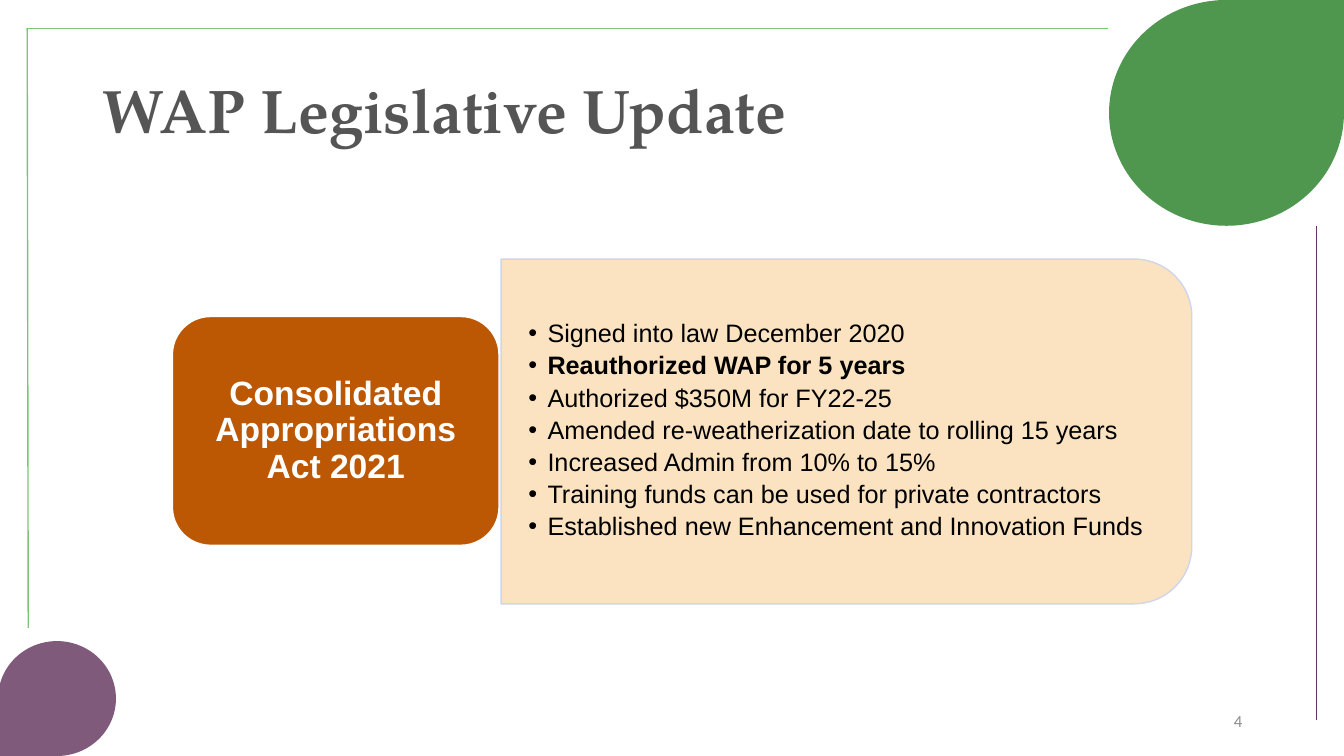
"""Build the WAP legislative update slide."""
from dataclasses import dataclass

from lxml.etree import SubElement
from pptx import Presentation
from pptx.dml.color import RGBColor
from pptx.enum.shapes import MSO_CONNECTOR as Connector, MSO_SHAPE as Shape
from pptx.enum.text import MSO_ANCHOR as Anchor, PP_ALIGN as Align
from pptx.oxml.ns import qn
from pptx.util import Inches, Pt

TITLE = "WAP Legislative Update"
ACT = "Consolidated Appropriations Act 2021"
PROVISIONS = [
    ("Signed into law December 2020", False),
    ("Reauthorized WAP for 5 years", True),
    ("Authorized $350M for FY22-25", False),
    ("Amended re-weatherization date to rolling 15 years", False),
    ("Increased Admin from 10% to 15%", False),
    ("Training funds can be used for private contractors", False),
    ("Established new Enhancement and Innovation Funds", False),
]
PAGE_NUMBER = "4"


@dataclass(frozen=True)
class Theme:
    title_font: str = "TeX Gyre Pagella"
    body_font: str = "Arial"
    number_font: str = "Calibri"
    title_size: int = 44
    act_size: int = 24
    body_size: int = 18
    number_size: int = 12
    title: str = "555555"
    text: str = "000000"
    number: str = "8C8C8C"
    white: str = "FFFFFF"
    green: str = "338533"
    light_green: str = "7CC576"
    purple: str = "63365F"
    orange: str = "BC5704"
    peach: str = "F8C984"
    panel_edge: str = "CFD5EA"


THEME = Theme()
FRAME_LINES = [
    ((0.27, 0.28), (10.99, 0.28), THEME.light_green),
    ((0.27, 0.28), (0.28, 6.23), THEME.light_green),
    ((13.06, 2.24), (13.06, 7.14), THEME.purple),
]
PANEL = (4.97, 2.57, 6.85, 3.42)
ACT_BOX = (1.71, 3.14, 3.24, 2.27)


def set_alpha(color_format, percent):
    color = color_format._xFill.find(qn("a:srgbClr"))
    SubElement(color, qn("a:alpha"), val=str(percent * 1000))


def add_block(page, kind, area, fill, alpha=100, edge=None, rotation=0):
    block = page.shapes.add_shape(kind, *map(Inches, area))
    block.shadow.inherit = False
    block.rotation = rotation
    block.fill.solid()
    block.fill.fore_color.rgb = RGBColor.from_string(fill)
    if alpha < 100:
        set_alpha(block.fill.fore_color, alpha)
    if edge:
        block.line.color.rgb = RGBColor.from_string(edge)
        block.line.width = Pt(1)
    else:
        block.line.fill.background()
    return block


def add_line(page, start, end, color):
    line = page.shapes.add_connector(Connector.STRAIGHT, *map(Inches, start + end))
    line.line.color.rgb = RGBColor.from_string(color)
    line.line.width = Pt(1)
    SubElement(line._element.spPr, qn("a:effectLst"))


def prepare_frame(shape, insets=(0.1, 0.05)):
    frame = shape.text_frame
    frame.word_wrap = True
    frame.vertical_anchor = Anchor.MIDDLE
    frame.margin_left = frame.margin_right = Inches(insets[0])
    frame.margin_top = frame.margin_bottom = Inches(insets[1])
    return frame


def write(para, text, font, size, color, bold=False, align=Align.LEFT,
          line_spacing=0.9, after=0, bullet=False):
    para.alignment = align
    para.line_spacing = line_spacing
    para.space_before = Pt(0)
    para.space_after = Pt(after)
    if bullet:
        indent = Inches(0.19)
        props = para._p.get_or_add_pPr()
        props.set("marL", str(indent))
        props.set("indent", str(-indent))
        SubElement(props, qn("a:buFont"), typeface="Arial")
        SubElement(props, qn("a:buChar"), char="•")
    span = para.add_run()
    span.text = text
    span.font.name = font
    span.font.size = Pt(size)
    span.font.bold = bold
    span.font.color.rgb = RGBColor.from_string(color)


def add_text_box(page, area, insets=(0.1, 0.05)):
    return prepare_frame(page.shapes.add_textbox(*map(Inches, area)), insets)


def main():
    deck = Presentation()
    deck.slide_width, deck.slide_height = Inches(13.33), Inches(7.5)
    page = deck.slides.add_slide(deck.slide_layouts[5])

    title = page.shapes.title
    title.left, title.top, title.width, title.height = map(Inches, (0.92, 0.4, 11.5, 1.45))
    write(prepare_frame(title).paragraphs[0], TITLE, THEME.title_font,
          THEME.title_size, THEME.title, bold=True)

    for start, end, color in FRAME_LINES:
        add_line(page, start, end, color)
    add_block(page, Shape.TEAR, (11, 0, 2.33, 2.24), THEME.green, alpha=86)
    add_block(page, Shape.TEAR, (-0.02, 6.36, 1.17, 1.14), THEME.purple,
              alpha=82, rotation=180)

    left, top, width, height = PANEL
    shift = (width - height) / 2
    add_block(page, Shape.ROUND_2_SAME_RECTANGLE,
              (left + shift, top - shift, height, width), THEME.peach,
              alpha=50, edge=THEME.panel_edge, rotation=90)
    provisions = add_text_box(page, (left, 2.73, 6.69, 3.09), insets=(0.27, 0.14))
    for index, (text, bold) in enumerate(PROVISIONS):
        para = provisions.add_paragraph() if index else provisions.paragraphs[0]
        write(para, text, THEME.body_font, THEME.body_size, THEME.text,
              bold=bold, after=3.5, bullet=True)

    act = add_block(page, Shape.ROUNDED_RECTANGLE, ACT_BOX, THEME.orange, edge=THEME.white)
    write(prepare_frame(act, insets=(0.2, 0.15)).paragraphs[0], ACT, THEME.body_font,
          THEME.act_size, THEME.white, bold=True, align=Align.CENTER)

    number = add_text_box(page, (9.42, 6.95, 3, 0.4))
    write(number.paragraphs[0], PAGE_NUMBER, THEME.number_font, THEME.number_size,
          THEME.number, align=Align.RIGHT, line_spacing=1)

    deck.save("out.pptx")


if __name__ == "__main__":
    main()
